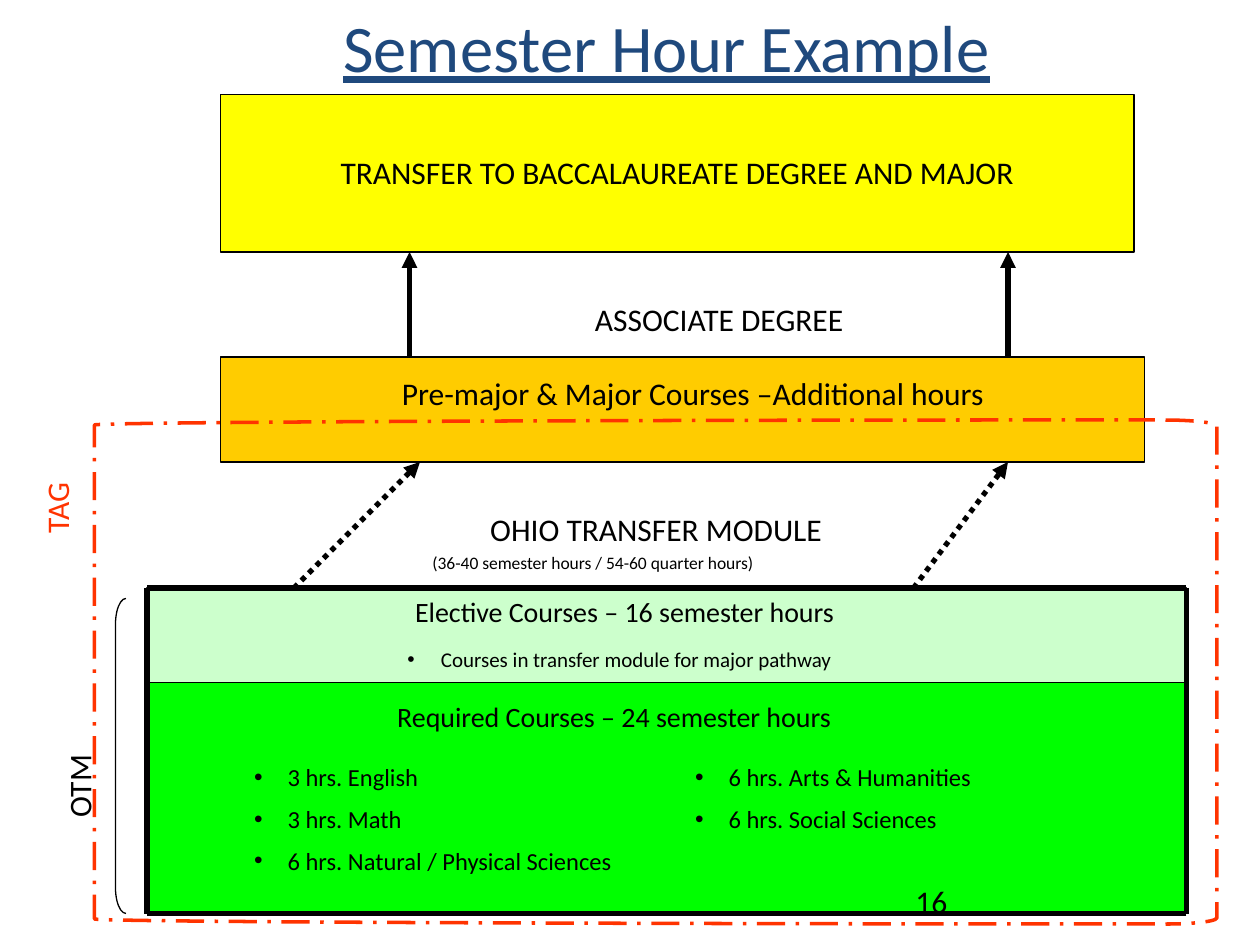
from lxml import etree
from pptx import Presentation
from pptx.dml.color import RGBColor
from pptx.enum.dml import MSO_LINE
from pptx.enum.shapes import MSO_CONNECTOR, MSO_SHAPE
from pptx.enum.text import MSO_ANCHOR, MSO_AUTO_SIZE, PP_ALIGN
from pptx.oxml.ns import qn
from pptx.util import Pt

PX = 7620  # EMU per px, 120 px to the inch
FONT = "Calibri"
BLACK = RGBColor(0x00, 0x00, 0x00)
NAVY = RGBColor(0x1F, 0x49, 0x7D)
RED = RGBColor(0xFF, 0x33, 0x00)
YELLOW = RGBColor(0xFF, 0xFF, 0x00)
ORANGE = RGBColor(0xFF, 0xCC, 0x00)
PALE_GREEN = RGBColor(0xCC, 0xFF, 0xCC)
GREEN = RGBColor(0x00, 0xFF, 0x00)

RECTANGLE, BRACKET = MSO_SHAPE.RECTANGLE, MSO_SHAPE.LEFT_BRACKET
STRAIGHT = MSO_CONNECTOR.STRAIGHT
DOTTED, DASH_DOT = MSO_LINE.ROUND_DOT, MSO_LINE.LONG_DASH_DOT
LEFT, CENTER = PP_ALIGN.LEFT, PP_ALIGN.CENTER
TOP, NO_FIT = MSO_ANCHOR.TOP, MSO_AUTO_SIZE.NONE

BULLET_INDENT = 32
LEFT_COURSES = ["3 hrs. English", "3 hrs. Math", "6 hrs. Natural / Physical Sciences"]
RIGHT_COURSES = ["6 hrs. Arts & Humanities", "6 hrs. Social Sciences"]


def emu(*lengths):
    return [length * PX for length in lengths]


def set_all(target, values):
    for name, value in values.items():
        setattr(target, name, value)


def add_bullet(paragraph):
    properties = paragraph._p.get_or_add_pPr()
    properties.set("marL", str(BULLET_INDENT * PX))
    properties.set("indent", str(-BULLET_INDENT * PX))
    etree.SubElement(properties, qn("a:buFont"), typeface="Arial")
    etree.SubElement(properties, qn("a:buChar"), char="•")


def write(frame, lines, size, color=BLACK, align=LEFT, bulleted=False, underline=None):
    set_all(frame, {"word_wrap": True, "auto_size": NO_FIT, "vertical_anchor": TOP})
    for index, line in enumerate(lines):
        paragraph = frame.add_paragraph() if index else frame.paragraphs[0]
        if bulleted:
            add_bullet(paragraph)
        set_all(paragraph, {"alignment": align,
                            "space_before": Pt(size / 2 if index else 0)})
        run = paragraph.add_run()
        run.text = line
        set_all(run.font, {"name": FONT, "size": Pt(size), "underline": underline})
        run.font.color.rgb = color


def add_label(slide, box, text, size=18, rotation=0, **text_format):
    label = slide.shapes.add_textbox(*emu(*box))
    label.rotation = rotation
    write(label.text_frame, [text], size, **text_format)


def fill_placeholder(slide, index, box, lines, size, **text_format):
    placeholder = slide.placeholders[index]
    set_all(placeholder, dict(zip(("left", "top", "width", "height"), emu(*box))))
    write(placeholder.text_frame, lines, size, **text_format)
    slide.shapes._spTree.append(placeholder._element)  # bring to front


def add_block(slide, box, color):
    block = slide.shapes.add_shape(RECTANGLE, *emu(*box))
    block.shadow.inherit = False
    block.fill.solid()
    block.fill.fore_color.rgb = color
    block.line.color.rgb = BLACK
    block.line.width = Pt(0.75)


def add_bracket(slide, box, curve, color=BLACK, width=0.75, dash=None, rotation=0):
    bracket = slide.shapes.add_shape(BRACKET, *emu(*box))
    bracket.shadow.inherit = False
    bracket.rotation = rotation
    bracket.adjustments[0] = curve
    bracket.fill.background()
    bracket.line.color.rgb = color
    set_all(bracket.line, {"width": Pt(width), "dash_style": dash})


def add_line(slide, ends, dash=None, arrow=False):
    line = slide.shapes.add_connector(STRAIGHT, *emu(*ends))
    line.line.color.rgb = BLACK
    set_all(line.line, {"width": Pt(3), "dash_style": dash})
    properties = line._element.spPr
    if arrow:
        etree.SubElement(properties.find(qn("a:ln")), qn("a:tailEnd"), type="triangle")
    etree.SubElement(properties, qn("a:effectLst"))


def add_transfer_module(slide):
    left, top, right, bottom = 140, 560, 1130, 870
    divide = 650

    # Required courses
    add_block(slide, (left, divide, right - left, bottom - divide), GREEN)
    fill_placeholder(slide, 1, (230, 720, 440, 151), LEFT_COURSES, 14, bulleted=True)
    fill_placeholder(slide, 2, (650, 720, 450, 82), RIGHT_COURSES, 14, bulleted=True)
    add_label(slide, (280, 660, 610, 44), "Required Courses – 24 semester hours",
              16, align=CENTER)

    # Elective courses
    add_block(slide, (left, top, right - left, divide - top), PALE_GREEN)
    add_label(slide, (290, 560, 610, 44), "Elective Courses – 16 semester hours",
              16, align=CENTER)
    add_label(slide, (220, 610, 740, 36), "Courses in transfer module for major pathway",
              12, align=CENTER, bulleted=True)

    # Heavy frame
    for x in (left, right):
        add_line(slide, (x, top, x, bottom))
    for y in (top, bottom):
        add_line(slide, (right, y, left, y))


def add_degree_steps(slide):
    # Module to associate degree
    for ends in ((280, 560, 400, 440), (870, 560, 960, 440)):
        add_line(slide, ends, DOTTED, arrow=True)
    add_block(slide, (210, 340, 880, 100), ORANGE)
    add_label(slide, (320, 350, 680, 92), "Pre-major & Major Courses –Additional hours",
              align=CENTER)
    add_label(slide, (390, 480, 470, 48), "OHIO TRANSFER MODULE", align=CENTER)
    add_label(slide, (450, 280, 470, 52), "ASSOCIATE DEGREE", align=CENTER)

    # Associate degree to baccalaureate
    for x in (390, 960):
        add_line(slide, (x, 340, x, 240), arrow=True)
    add_block(slide, (210, 90, 870, 150), YELLOW)
    add_label(slide, (220, 140, 850, 92), "TRANSFER TO BACCALAUREATE DEGREE AND MAJOR",
              align=CENTER)


def add_scope_brackets(slide):
    add_bracket(slide, (110, 570, 10, 300), 2.5)
    add_label(slide, (6, 444, 100, 52), "TAG", rotation=270, color=RED)
    add_label(slide, (22, 709, 110, 52), "OTM", rotation=270)
    tag_line = {"color": RED, "width": 2, "dash": DASH_DOT}
    add_bracket(slide, (90, 400, 1010, 480), 0.01, **tag_line)
    add_bracket(slide, (1110, 400, 49, 480), 0.12, rotation=180, **tag_line)


def main():
    deck = Presentation()
    deck.slide_width, deck.slide_height = emu(1200, 900)
    slide = deck.slides.add_slide(deck.slide_layouts[3])

    add_transfer_module(slide)
    add_degree_steps(slide)
    fill_placeholder(slide, 0, (110, 0, 1050, 88), ["Semester Hour Example"], 38,
                     color=NAVY, align=CENTER, underline=True)
    add_label(slide, (400, 520, 480, 32),
              "(36-40 semester hours / 54-60 quarter hours)", 10)
    add_scope_brackets(slide)
    add_label(slide, (860, 834, 280, 48), "16")

    deck.save("out.pptx")


if __name__ == "__main__":
    main()
